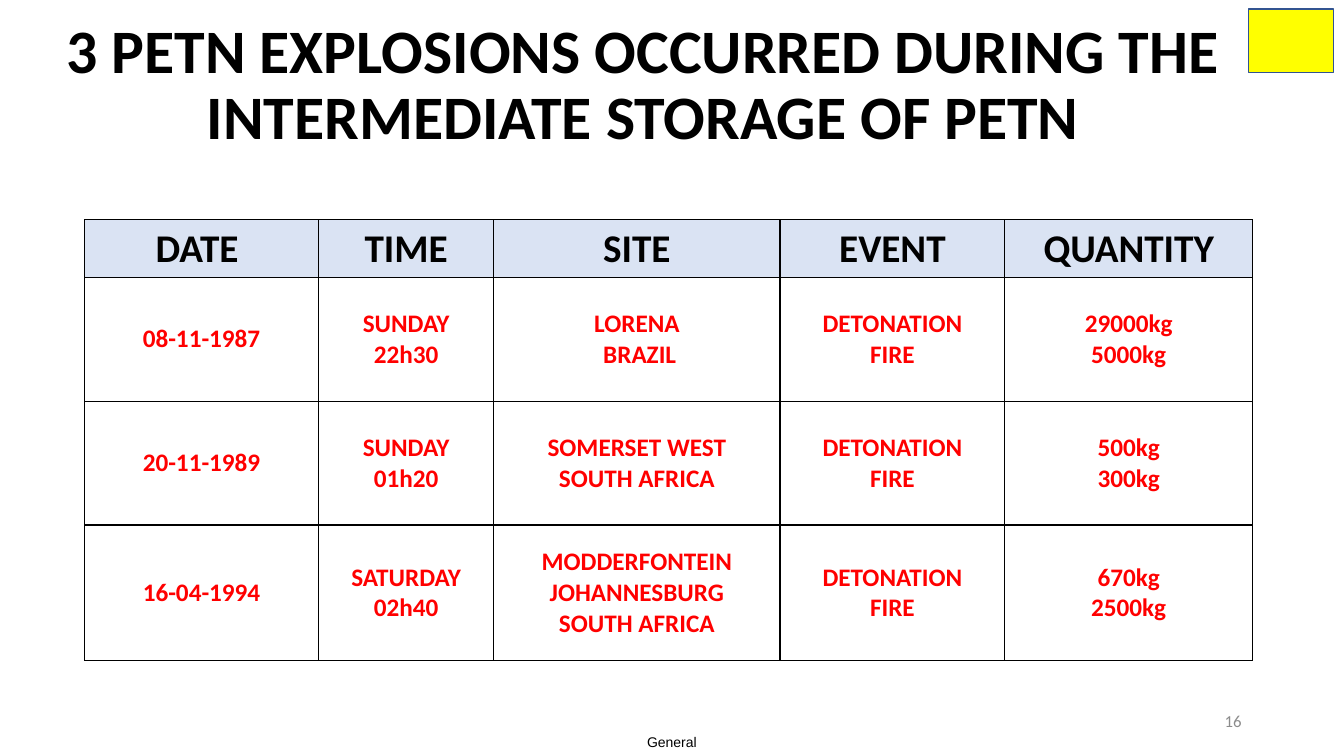
from typing import NamedTuple

from lxml import etree
from pptx import Presentation
from pptx import util as u
from pptx.dml import color
from pptx.enum import shapes, text
from pptx.oxml import ns


class Explosion(NamedTuple):
    date: str
    time: str
    site: str
    event: str
    quantity: str


HEADINGS = Explosion("DATE ", "TIME", "SITE", "EVENT", "QUANTITY")
EXPLOSIONS = [
    Explosion("08-11-1987", "SUNDAY\n22h30", "LORENA\n BRAZIL",
              "DETONATION\nFIRE", "29000kg\n5000kg"),
    Explosion("20-11-1989", "SUNDAY\n01h20", "SOMERSET WEST\nSOUTH AFRICA",
              "DETONATION\nFIRE", "500kg\n300kg"),
    Explosion("16-04-1994", "SATURDAY\n02h40",
              "MODDERFONTEIN\nJOHANNESBURG\nSOUTH AFRICA",
              "DETONATION\nFIRE", "670kg\n2500kg"),
]
COLUMN_WIDTHS = [167, 125.2, 204.5, 160.6, 177]
ROW_HEIGHTS = [41, 88.5, 88.5, 97]


def rgb(value: str) -> color.RGBColor:
    return color.RGBColor.from_string(value)


def write(frame, content: str, *, size: float, ink: str = "000000",
          bold: bool = False, font: str = "Calibri",
          align=text.PP_ALIGN.CENTER, spacing: float = 1.0) -> None:
    frame.text = content
    for paragraph in frame.paragraphs:
        paragraph.alignment = align
        paragraph.line_spacing = spacing
        for run in paragraph.runs:
            run.font.name = font
            run.font.size = u.Pt(size)
            run.font.bold = bold
            run.font.color.rgb = rgb(ink)


def place(left: float, top: float, width: float, height: float) -> list:
    return [u.Pt(length) for length in (left, top, width, height)]


def add_label(slide, box: list, content: str, **style) -> None:
    frame = slide.shapes.add_textbox(*box).text_frame
    frame.word_wrap = True
    frame.vertical_anchor = text.MSO_ANCHOR.MIDDLE
    write(frame, content, **style)


def add_borders(cell, ink: str = "000000") -> None:
    properties = cell._tc.get_or_add_tcPr()
    for position, side in enumerate(("lnL", "lnR", "lnT", "lnB")):
        border = etree.Element(ns.qn(f"a:{side}"), w=str(u.Pt(1)))
        fill = etree.SubElement(border, ns.qn("a:solidFill"))
        etree.SubElement(fill, ns.qn("a:srgbClr"), val=ink)
        properties.insert(position, border)


def add_explosion_table(slide) -> None:
    records = [HEADINGS, *EXPLOSIONS]
    box = place(60.5, 157, sum(COLUMN_WIDTHS), sum(ROW_HEIGHTS))
    table = slide.shapes.add_table(len(records), len(HEADINGS), *box).table
    table.horz_banding = False
    for column, width in zip(table.columns, COLUMN_WIDTHS):
        column.width = u.Pt(width)
    for row, height, record in zip(table.rows, ROW_HEIGHTS, records):
        row.height = u.Pt(height)
        heading = record is HEADINGS
        for cell, content in zip(row.cells, record):
            cell.fill.solid()
            cell.fill.fore_color.rgb = rgb("DAE3F3" if heading else "FFFFFF")
            cell.vertical_anchor = (text.MSO_ANCHOR.TOP if heading
                                    else text.MSO_ANCHOR.MIDDLE)
            write(cell.text_frame, content, bold=True,
                  size=28 if heading else 18,
                  ink="000000" if heading else "FF0000")
            add_borders(cell)


def add_title(slide) -> None:
    title = slide.shapes.title
    title.left, title.top, title.width, title.height = place(24.5, 21.6, 870, 90)
    frame = title.text_frame
    frame.word_wrap = True
    frame.auto_size = text.MSO_AUTO_SIZE.NONE
    frame.vertical_anchor = text.MSO_ANCHOR.MIDDLE
    frame.margin_top, frame.margin_bottom = u.Pt(0), u.Pt(9.4)
    write(frame, "3 PETN EXPLOSIONS OCCURRED DURING THE "
                 "INTERMEDIATE STORAGE OF PETN",
          size=44.1, bold=True, spacing=0.9)


def add_marker(slide) -> None:
    marker = slide.shapes.add_shape(shapes.MSO_SHAPE.RECTANGLE,
                                    *place(892, 6.5, 60.5, 45.4))
    marker.shadow.inherit = False
    marker.fill.solid()
    marker.fill.fore_color.rgb = rgb("FFFF00")
    marker.line.color.rgb = rgb("325491")
    marker.line.width = u.Pt(1)


def main() -> None:
    deck = Presentation()
    deck.slide_width, deck.slide_height = u.Pt(960), u.Pt(540)
    slide = deck.slides.add_slide(deck.slide_layouts[5])
    add_label(slide, place(451.4, 520.5, 57, 19.5), "General", size=10, font="Arial")
    add_title(slide)
    add_explosion_table(slide)
    add_label(slide, place(678, 500.5, 216, 28.8), "16", size=12,
              ink="8C8C8C", align=text.PP_ALIGN.RIGHT)
    add_marker(slide)
    deck.save("out.pptx")


if __name__ == "__main__":
    main()
